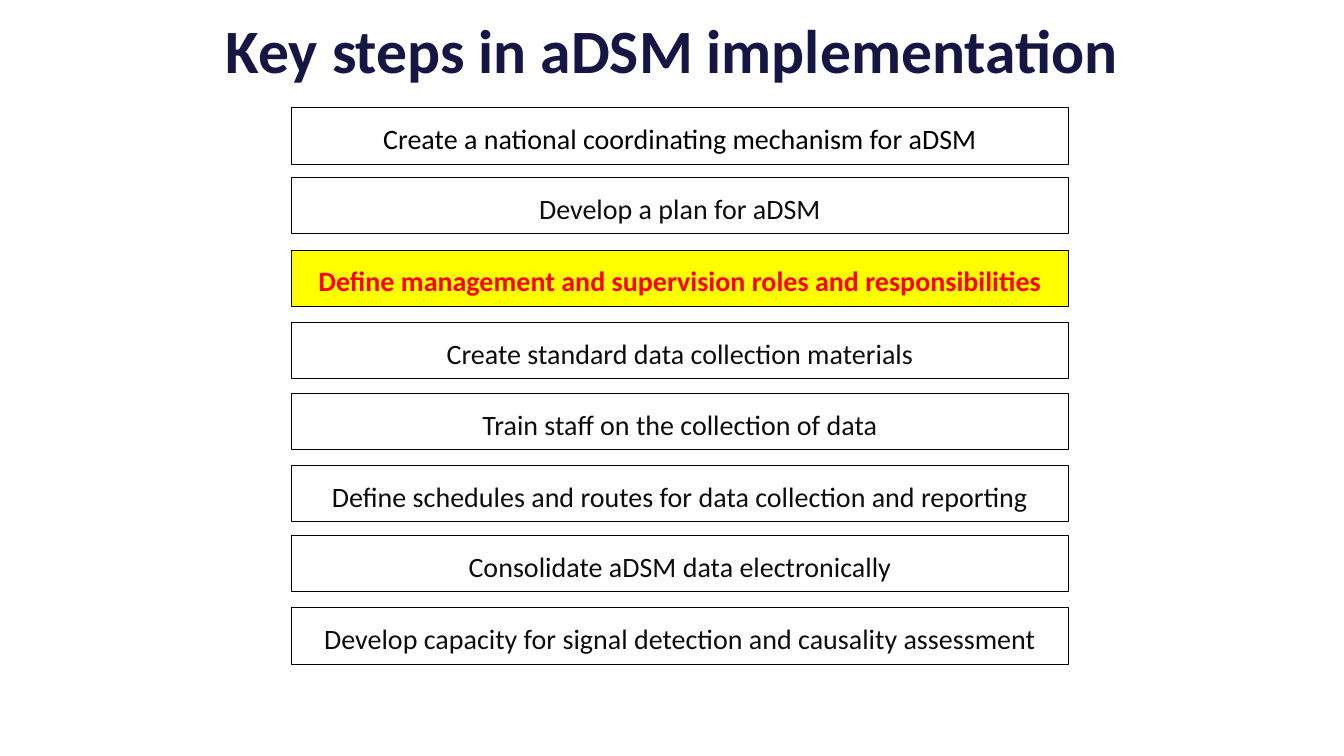
import pptx
import pptx.util
import pptx.dml.color
import pptx.enum.shapes
import pptx.enum.text

Pt = pptx.util.Pt

HUES = {"navy": "161645", "black": "000000", "ink": "0D0D0D",
        "white": "FFFFFF", "yellow": "FFFF00", "red": "FF0000"}

# Step text, top edge, fill and font colours
STEPS = [
    ("Create a national coordinating mechanism for aDSM", 77, None, "black"),
    ("Develop a plan for aDSM", 126.7, None, "ink"),
    ("Define management and supervision roles and responsibilities", 178.6, "yellow", "red"),
    ("Create standard data collection materials", 230.4, "white", "ink"),
    ("Train staff on the collection of data", 280.8, "white", "ink"),
    ("Define schedules and routes for data collection and reporting", 332.6, "white", "ink"),
    ("Consolidate aDSM data electronically", 382.3, "white", "ink"),
    ("Develop capacity for signal detection and causality assessment", 434.2, "white", "ink"),
]
LEFT, WIDTH, HEIGHT = 208.1, 555.1, 40.3


def hue(name):
    return pptx.dml.color.RGBColor.from_string(HUES[name])


def set_all(item, values):
    for key, value in values.items():
        setattr(item, key, value)


def write(shape, text, size, color, bold, **space):
    frame = shape.text_frame
    set_all(frame, {"word_wrap": True,
                    "vertical_anchor": pptx.enum.text.MSO_ANCHOR.MIDDLE})
    para = frame.paragraphs[0]
    set_all(para, {"alignment": pptx.enum.text.PP_ALIGN.CENTER, **space})
    run = para.add_run()
    run.text = text
    set_all(run.font, {"name": "Calibri", "size": Pt(size), "bold": bold})
    run.font.color.rgb = hue(color)


def add_title(slide, text):
    box = slide.shapes.add_textbox(Pt(151.2), Pt(3.6), Pt(658.1), Pt(62.6))
    write(box, text, 44, "navy", True)


def add_step(slide, text, top, fill, color):
    box = slide.shapes.add_shape(pptx.enum.shapes.MSO_SHAPE.RECTANGLE,
                                 Pt(LEFT), Pt(top), Pt(WIDTH), Pt(HEIGHT))
    box.shadow.inherit = False
    if fill:
        box.fill.solid()
        box.fill.fore_color.rgb = hue(fill)
    else:
        box.fill.background()
    box.line.color.rgb = hue("black")
    box.line.width = Pt(0.75)
    write(box, text, 20, color, color == "red",
          line_spacing=1.15, space_after=Pt(10))


def main():
    deck = pptx.Presentation()
    set_all(deck, {"slide_width": Pt(960), "slide_height": Pt(540)})
    slide = deck.slides.add_slide(deck.slide_layouts[6])

    # Heading
    add_title(slide, "Key steps in aDSM implementation")

    # Stack of steps
    for step in STEPS:
        add_step(slide, *step)

    deck.save("out.pptx")


if __name__ == "__main__":
    main()
